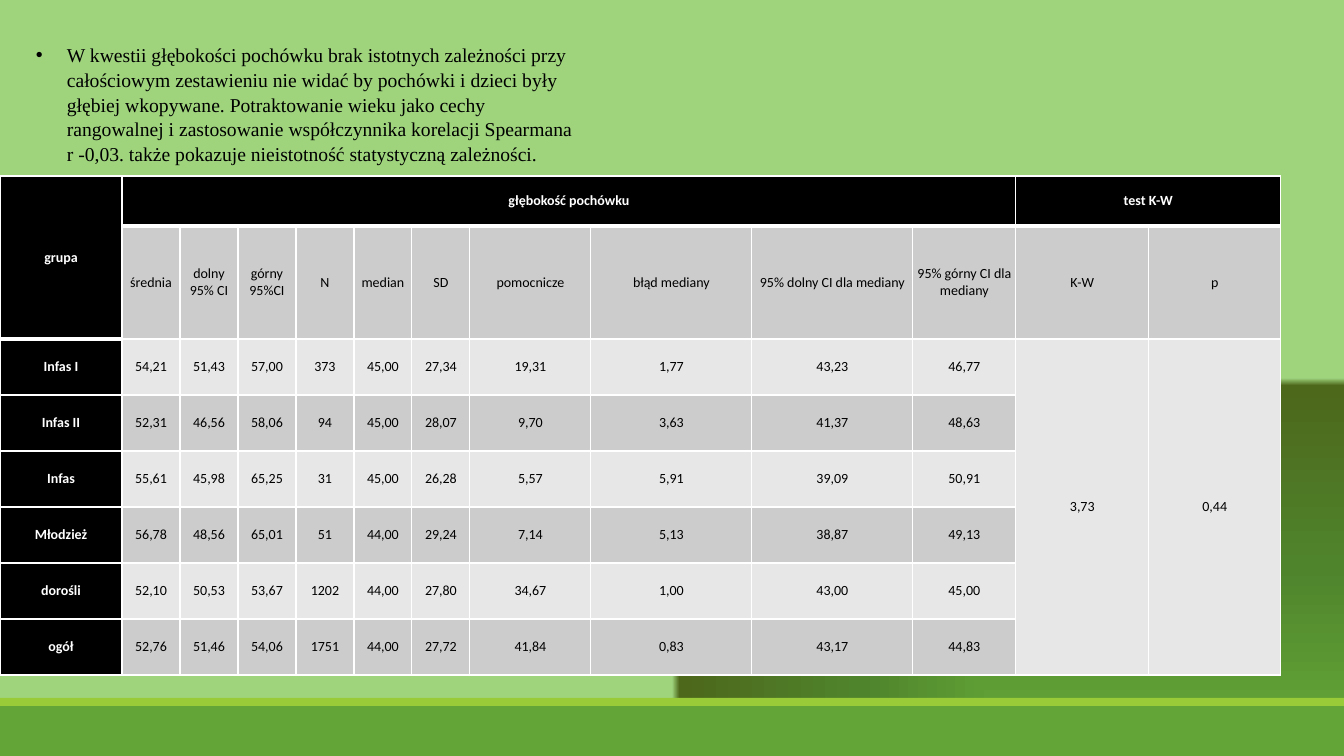
from dataclasses import dataclass

from lxml import etree
from pptx import Presentation
from pptx.dml.color import RGBColor as Rgb
from pptx.enum.shapes import MSO_SHAPE as Shape
from pptx.enum.text import MSO_ANCHOR as Anchor, PP_ALIGN as Align
from pptx.oxml import parse_xml
from pptx.oxml.ns import qn
from pptx.util import Emu, Pt

SCALE = 914400 / 100.8
NS = 'xmlns:a="http://schemas.openxmlformats.org/drawingml/2006/main"'


@dataclass(frozen=True)
class Theme:
    black: str = "000000"
    white: str = "FFFFFF"
    odd: str = "E7E7E7"
    even: str = "CCCCCC"
    band: str = "63A537"
    strip: str = "99CB38"
    stops: tuple = ((0, "67AC39"), (50, "4F842C"), (98, "4D671B"), (100, "9FD47D"))
    serif: str = "Times New Roman"
    sans: str = "Calibri"
    body: int = 14
    small: int = 10


def px(n):
    return Emu(round(n * SCALE))


class Deck:
    def __init__(self, theme, wide, high):
        self.theme = theme
        self.prs = Presentation()
        self.prs.slide_width, self.prs.slide_height = px(wide), px(high)
        self.slide = self.prs.slides.add_slide(self.prs.slide_layouts[6])

    def back(self):
        """Fill the background with a gradient centred on the lower right corner."""
        fill = self.slide.background.fill
        fill.solid()
        fill.fore_color.rgb = Rgb.from_string(self.theme.black)
        stops = "".join(
            f'<a:gs pos="{pos * 1000}"><a:srgbClr val="{color}"/></a:gs>'
            for pos, color in self.theme.stops)
        grad = parse_xml(
            f'<a:gradFill {NS} rotWithShape="1"><a:gsLst>{stops}</a:gsLst>'
            '<a:path path="rect"><a:fillToRect l="100000" t="100000"/></a:path></a:gradFill>')
        old = self.slide.element.find(".//" + qn("p:bgPr")).find(qn("a:solidFill"))
        old.getparent().replace(old, grad)

    def rect(self, box, color):
        shape = self.slide.shapes.add_shape(Shape.RECTANGLE, *map(px, box))
        shape.shadow.inherit = False
        shape.fill.solid()
        shape.fill.fore_color.rgb = Rgb.from_string(color)
        shape.line.fill.background()

    def run(self, para, text, face, size, color, bold=False):
        run = para.add_run()
        run.text = text
        font = run.font
        font.name, font.size, font.bold = face, Pt(size), bold
        font.color.rgb = Rgb.from_string(color)

    def bullet(self, box, text, indent):
        frame = self.slide.shapes.add_textbox(*map(px, box)).text_frame
        frame.word_wrap = True
        para = frame.paragraphs[0]
        para.line_spacing = 1.05
        props = para._p.get_or_add_pPr()
        props.set("marL", str(px(indent)))
        props.set("indent", str(-px(indent)))
        etree.SubElement(props, qn("a:buFont")).set("typeface", "Arial")
        etree.SubElement(props, qn("a:buChar")).set("char", "•")
        self.run(para, text, self.theme.serif, self.theme.body, self.theme.black)

    def edge(self, cell, top, base):
        """Draw white cell borders; top and base are widths in points."""
        props = cell._tc.get_or_add_tcPr()
        for i, (side, width) in enumerate(zip("LRTB", (1, 1, top, base))):
            props.insert(i, parse_xml(
                f'<a:ln{side} {NS} w="{Pt(width)}"><a:solidFill>'
                f'<a:srgbClr val="{self.theme.white}"/></a:solidFill></a:ln{side}>'))

    def cell(self, cell, text, fill, dark):
        cell.margin_left = cell.margin_right = cell.margin_top = cell.margin_bottom = 0
        cell.vertical_anchor = Anchor.MIDDLE
        cell.fill.solid()
        cell.fill.fore_color.rgb = Rgb.from_string(fill)
        if text:
            para = cell.text_frame.paragraphs[0]
            para.alignment = Align.CENTER
            color = self.theme.white if dark else self.theme.black
            self.run(para, text, self.theme.sans, self.theme.small, color, dark)

    def table(self, left, top, cols, rows, data, spans):
        theme = self.theme
        grid = self.slide.shapes.add_table(
            len(rows), len(cols), px(left), px(top), px(sum(cols)), px(sum(rows))).table
        grid.first_row = grid.horz_banding = False
        for col, width in zip(grid.columns, cols):
            col.width = px(width)
        for row, height in zip(grid.rows, rows):
            row.height = px(height)
        for r, line in enumerate(data):
            for c in range(len(cols)):
                cell = grid.cell(r, c)
                dark = r == 0 or c == 0
                shade = theme.even if r % 2 else theme.odd
                text = line[c] if c < len(line) else ""
                self.cell(cell, text, theme.black if dark else shade, dark)
                head = 1 if c == 0 else 0  # last header row of this column
                self.edge(cell, 3 if r == head + 1 else 1, 3 if r == head else 1)
        for r, c, r2, c2 in spans:
            grid.cell(r, c).merge(grid.cell(r2, c2))


NOTE = (
    "W kwestii głębokości pochówku brak istotnych zależności przy całościowym "
    "zestawieniu nie widać by pochówki i dzieci były głębiej wkopywane. "
    "Potraktowanie wieku jako cechy rangowalnej i zastosowanie współczynnika "
    "korelacji Spearmana r -0,03. także pokazuje nieistotność statystyczną zależności."
)
DATA = [line.split("|") for line in (
    "grupa|głębokość pochówku||||||||||test K-W|",
    "|średnia|dolny 95% CI|górny 95%CI|N|median|SD|pomocnicze|błąd mediany"
    "|95% dolny CI dla mediany|95% górny CI dla mediany|K-W|p",
    "Infas I|54,21|51,43|57,00|373|45,00|27,34|19,31|1,77|43,23|46,77|3,73|0,44",
    "Infas II|52,31|46,56|58,06|94|45,00|28,07|9,70|3,63|41,37|48,63",
    "Infas|55,61|45,98|65,25|31|45,00|26,28|5,57|5,91|39,09|50,91",
    "Młodzież|56,78|48,56|65,01|51|44,00|29,24|7,14|5,13|38,87|49,13",
    "dorośli|52,10|50,53|53,67|1202|44,00|27,80|34,67|1,00|43,00|45,00",
    "ogół|52,76|51,46|54,06|1751|44,00|27,72|41,84|0,83|43,17|44,83",
)]
COLS = [122] + [58] * 6 + [121, 161, 161, 103, 133, 132]
ROWS = [50, 113] + [56] * 6
SPANS = [(0, 0, 1, 0), (0, 1, 0, 10), (0, 11, 0, 12), (2, 11, 7, 11), (2, 12, 7, 12)]


def main():
    theme = Theme()
    deck = Deck(theme, 1344, 756)
    deck.back()
    deck.rect((0, 706, 1344, 50), theme.band)
    deck.rect((0, 698, 1344, 8), theme.strip)
    deck.bullet((26, 37, 559, 152), NOTE, 31)
    deck.table(0, 176, COLS, ROWS, DATA, SPANS)
    deck.prs.save("out.pptx")


if __name__ == "__main__":
    main()
